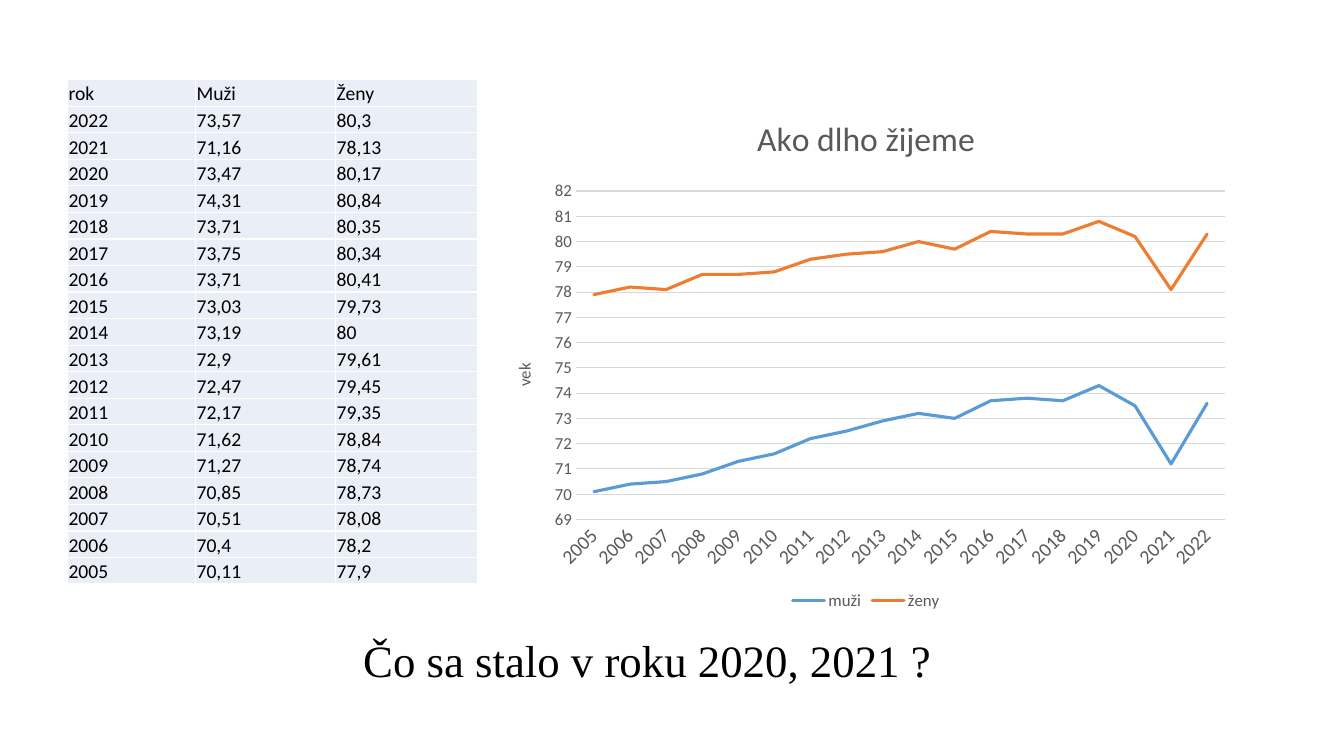
from lxml import etree
from pptx import Presentation
from pptx import util as u
from pptx.chart import data as cd
from pptx.dml.color import RGBColor
from pptx.enum import chart as ch, text
from pptx.oxml.ns import qn

GREY, RULE, PALE, WHITE, BLACK = "595959", "D9D9D9", "EAEFF7", "FFFFFF", "000000"
MEN = [70.11, 70.4, 70.51, 70.85, 71.27, 71.62, 72.17, 72.47, 72.9,
       73.19, 73.03, 73.71, 73.75, 73.71, 74.31, 73.47, 71.16, 73.57]
WOMEN = [77.9, 78.2, 78.08, 78.73, 78.74, 78.84, 79.35, 79.45, 79.61,
         80, 79.73, 80.41, 80.34, 80.35, 80.84, 80.17, 78.13, 80.3]
YEARS = [str(year) for year in range(2005, 2023)]


def rgb(code):
    return RGBColor.from_string(code)


def style(font, size, color, face="Calibri"):
    font.size, font.name, font.bold = u.Pt(size), face, False
    font.color.rgb = rgb(color)


deck = Presentation()
deck.slide_width, deck.slide_height = u.Inches(13.33), u.Inches(7.5)
slide = deck.slides.add_slide(deck.slide_layouts[5])

# Question
title = slide.shapes.title
title.left, title.top = u.Inches(0.67), u.Inches(6.21)
title.width, title.height = u.Inches(11.5), u.Inches(0.73)
title.text_frame.text = "Čo sa stalo v roku 2020, 2021 ?"
title.text_frame.vertical_anchor = text.MSO_ANCHOR.MIDDLE
line = title.text_frame.paragraphs[0]
line.alignment, line.line_spacing = text.PP_ALIGN.CENTER, 0.9
style(line.font, 32, BLACK, "Times New Roman")

# Table, newest year first
rows = [("rok", "Muži", "Ženy")]
for year, man, woman in reversed(list(zip(YEARS, MEN, WOMEN))):
    rows.append((year, f"{man:g}".replace(".", ","), f"{woman:g}".replace(".", ",")))
table = slide.shapes.add_table(len(rows), 3, u.Inches(0.67), u.Inches(0.79),
                               u.Inches(4.07), u.Inches(0.25 * len(rows))).table
table.first_row = table.horz_banding = False
for col, width in zip(table.columns, (1.27, 1.39, 1.41)):
    col.width = u.Inches(width)
for r, row in enumerate(rows):
    table.rows[r].height = u.Inches(0.25)
    for c, value in enumerate(row):
        cell = table.cell(r, c)
        cell.text = value
        cell.margin_left = cell.margin_right = cell.margin_top = u.Inches(0.01)
        cell.margin_bottom = 0
        top = r > 0 and c == 0
        cell.vertical_anchor = text.MSO_ANCHOR.TOP if top else text.MSO_ANCHOR.BOTTOM
        para = cell.text_frame.paragraphs[0]
        para.line_spacing, para.space_after = 1.07, u.Pt(8)
        style(para.font, 14, BLACK)
        props = cell._tc.get_or_add_tcPr()
        for side in ("lnL", "lnR", "lnT", "lnB"):
            edge = etree.SubElement(props, qn("a:" + side), w=str(u.Pt(1)))
            fill = etree.SubElement(edge, qn("a:solidFill"))
            etree.SubElement(fill, qn("a:srgbClr"), val=WHITE)
        cell.fill.solid()
        cell.fill.fore_color.rgb = rgb(PALE)

# Line chart
data = cd.CategoryChartData()
data.categories = YEARS
for name, ages in (("muži", MEN), ("ženy", WOMEN)):
    data.add_series(name, [round(age, 1) for age in ages])
chart = slide.shapes.add_chart(ch.XL_CHART_TYPE.LINE, u.Inches(4.88), u.Inches(0.93),
                               u.Inches(7.42), u.Inches(5.17), data).chart
style(chart.font, 10, BLACK)
chart.plots[0].vary_by_categories = False
for series, color in zip(chart.plots[0].series, ("5B9BD5", "ED7D31")):
    series.smooth = False
    series.marker.style = ch.XL_MARKER_STYLE.NONE
    series.format.line.width = u.Pt(2.25)
    series.format.line.color.rgb = rgb(color)
    series._element.spPr.find(qn("a:ln")).set("cap", "rnd")

chart.has_legend = True
chart.legend.position = ch.XL_LEGEND_POSITION.BOTTOM
chart.legend.include_in_layout = False
style(chart.legend.font, 12, GREY)

cat, val = chart.category_axis, chart.value_axis
for axis, size in ((cat, 14), (val, 12)):
    axis.major_tick_mark = axis.minor_tick_mark = ch.XL_TICK_MARK.NONE
    style(axis.tick_labels.font, size, GREY)
cat._element.txPr.bodyPr.set("rot", "-2700000")
val.minimum_scale, val.maximum_scale, val.major_unit = 69, 82, 1
val.format.line.fill.background()
val.has_major_gridlines = True
for rule in (cat.format.line, val.major_gridlines.format.line):
    rule.width = u.Pt(0.75)
    rule.color.rgb = rgb(RULE)

for owner, label, size in ((chart.chart_title, "Ako dlho žijeme", 24),
                           (val.axis_title, "vek", 12)):
    owner.text_frame.text = label
    style(owner.text_frame.paragraphs[0].font, size, GREY)
val.axis_title.text_frame._txBody.bodyPr.set("rot", "-5400000")

deck.save("out.pptx")
